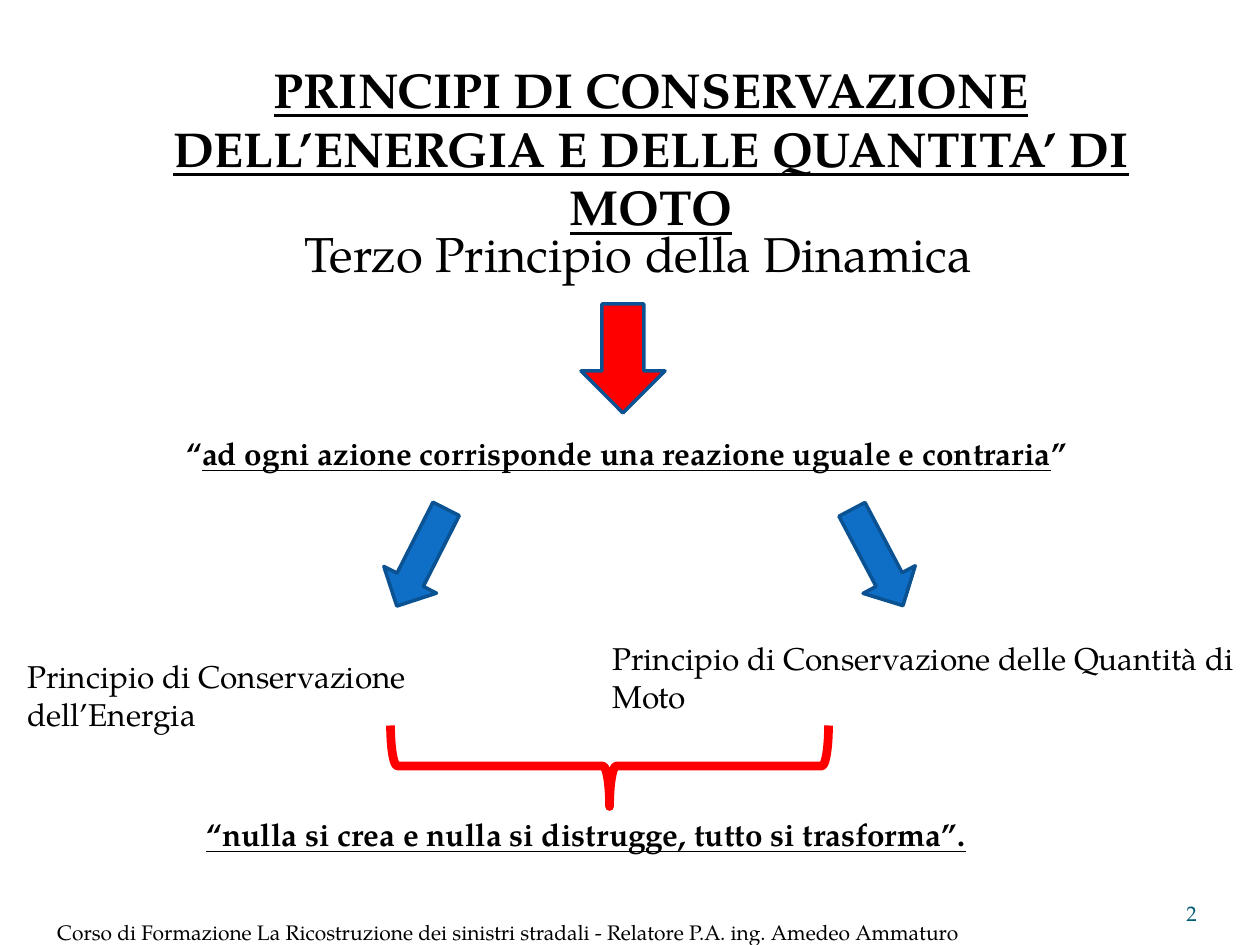
"""Builds the slide on the conservation of energy and momentum."""
from dataclasses import dataclass

from pptx import Presentation
from pptx.dml.color import RGBColor
from pptx.enum.shapes import MSO_SHAPE
from pptx.enum.text import MSO_ANCHOR, MSO_AUTO_SIZE, PP_ALIGN
from pptx.util import Pt

DOWN, BRACE = MSO_SHAPE.DOWN_ARROW, MSO_SHAPE.RIGHT_BRACE
LEFT, CENTER, RIGHT = PP_ALIGN.LEFT, PP_ALIGN.CENTER, PP_ALIGN.RIGHT
TOP, BOTTOM = MSO_ANCHOR.TOP, MSO_ANCHOR.BOTTOM
TITLE_ONLY = 5


@dataclass(frozen=True)
class Theme:
    font: str = "TeX Gyre Pagella"
    ink: str = "000000"
    number: str = "045D75"
    red: str = "FF0000"
    blue: str = "0F6FC6"
    outline: str = "0B5292"
    heading: int = 28
    body: int = 18
    small: int = 12
    thin: int = 2
    thick: int = 5


THEME = Theme()
PLAIN, BOLD, UNDERLINED = (False, False), (True, False), (True, True)

TITLE = "PRINCIPI DI CONSERVAZIONE DELL’ENERGIA E DELLE QUANTITA’ DI MOTO"
TITLE_BOX = (84, 53, 1134, 190)

STATEMENTS = [
    ((292, 217, 745, 131), THEME.heading,
     [("Terzo Principio della Dinamica", PLAIN)]),
    ((174, 428, 922, 50), THEME.body,
     [("“", BOLD),
      ("ad ogni azione corrisponde una reazione uguale e contraria", UNDERLINED),
      ("”", BOLD)]),
    ((15, 651, 564, 88), THEME.body,
     [("Principio di Conservazione dell’Energia", PLAIN)]),
    ((600, 633, 694, 89), THEME.body,
     [("Principio di Conservazione delle Quantità di Moto", PLAIN)]),
    ((194, 809, 893, 50), THEME.body,
     [("“nulla si crea e nulla si distrugge, tutto si trasforma”.", UNDERLINED)]),
]

FOOTERS = [
    ((1092, 876, 105, 50), RIGHT, THEME.number, "2"),
    ((0, 895, 1017, 50), CENTER, THEME.ink,
     "Corso di Formazione La Ricostruzione dei sinistri stradali"
     " - Relatore P.A. ing. Amedeo Ammaturo"),
]

SYMBOLS = [
    (DOWN, (581, 304, 84, 109), 0, THEME.red, THEME.outline, THEME.thin),
    (DOWN, (392, 503, 59, 109), 26.9, THEME.blue, THEME.outline, THEME.thin),
    (DOWN, (848, 503, 59, 109), 332.1, THEME.blue, THEME.outline, THEME.thin),
    (BRACE, (569, 547, 81, 438), 90, None, THEME.red, THEME.thick),
]


def px(value):
    return round(value * 914400 / 126)


def write(frame, runs, size, align=LEFT, color=THEME.ink, anchor=TOP):
    frame.word_wrap = True
    frame.auto_size = MSO_AUTO_SIZE.NONE
    frame.vertical_anchor = anchor
    paragraph = frame.paragraphs[0]
    paragraph.alignment = align
    for text, (bold, underline) in runs:
        run = paragraph.add_run()
        run.text = text
        font = run.font
        font.name, font.size = THEME.font, Pt(size)
        font.bold, font.underline = bold, underline
        font.color.rgb = RGBColor.from_string(color)


def add_title(slide):
    title = slide.shapes.title
    title.left, title.top, title.width, title.height = map(px, TITLE_BOX)
    write(title.text_frame, [(TITLE, UNDERLINED)], THEME.heading, CENTER)


def add_footer(slide, box, align, color, text):
    frame = slide.shapes.add_textbox(*map(px, box)).text_frame
    frame.margin_left = frame.margin_right = 0
    frame.margin_top = frame.margin_bottom = 0
    write(frame, [(text, PLAIN)], THEME.small, align, color, BOTTOM)


def add_symbol(slide, kind, box, rotation, fill, line, weight):
    symbol = slide.shapes.add_shape(kind, *map(px, box))
    symbol.shadow.inherit = False
    symbol.rotation = rotation
    if fill:
        symbol.fill.solid()
        symbol.fill.fore_color.rgb = RGBColor.from_string(fill)
    else:
        symbol.fill.background()
    symbol.line.color.rgb = RGBColor.from_string(line)
    symbol.line.width = Pt(weight)


def main():
    deck = Presentation()
    deck.slide_width, deck.slide_height = px(1260), px(945)
    slide = deck.slides.add_slide(deck.slide_layouts[TITLE_ONLY])
    add_title(slide)
    for footer in FOOTERS:
        add_footer(slide, *footer)
    for symbol in SYMBOLS:
        add_symbol(slide, *symbol)
    for box, size, runs in STATEMENTS:
        write(slide.shapes.add_textbox(*map(px, box)).text_frame, runs, size)
    deck.save("out.pptx")


if __name__ == "__main__":
    main()
